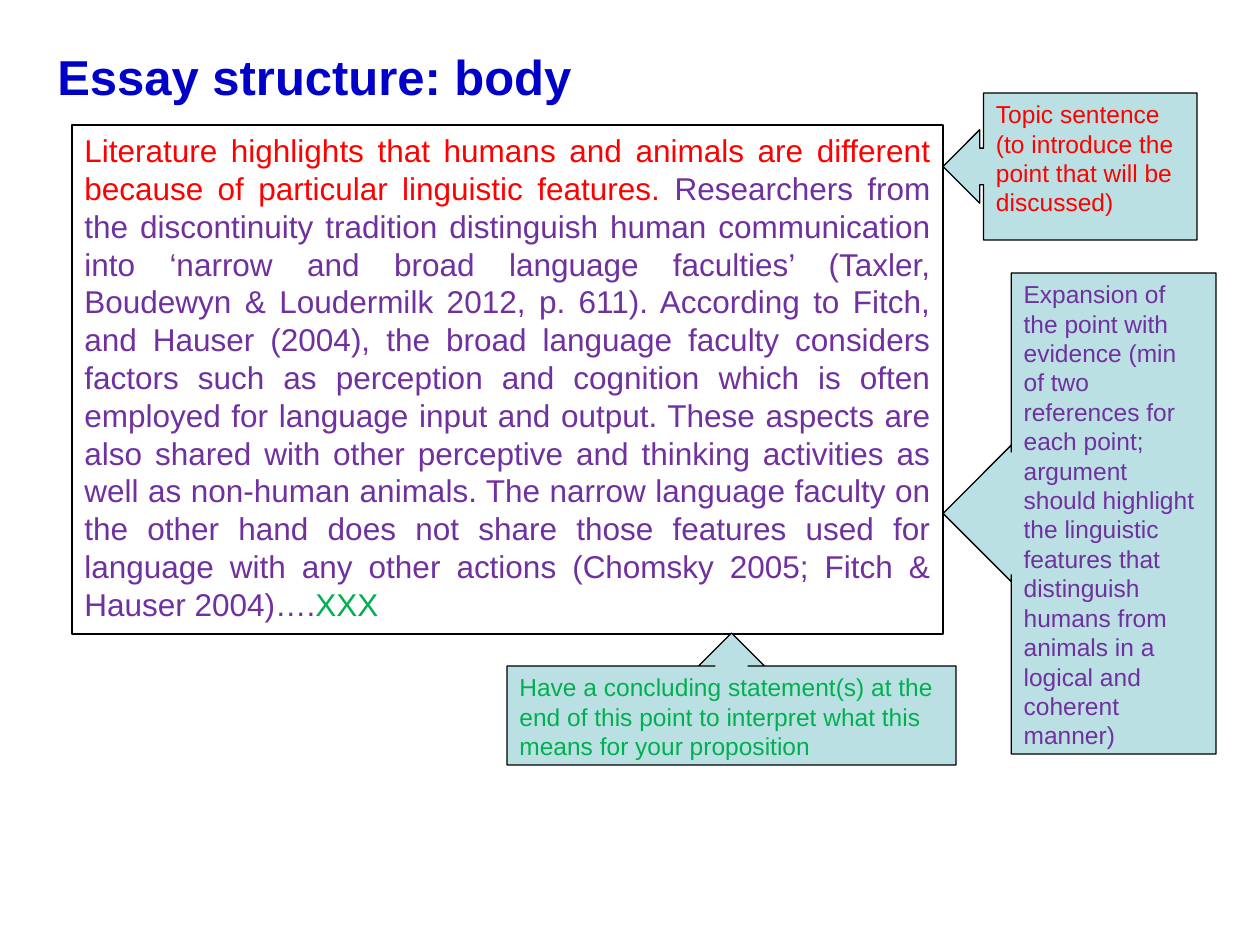
from pptx import Presentation
from pptx.dml.color import RGBColor
from pptx.enum.shapes import MSO_SHAPE
from pptx.enum.text import MSO_ANCHOR, PP_ALIGN
from pptx.util import Emu, Pt

PX_PER_INCH = 126
FONT = "Arial"
BLUE = RGBColor(0x00, 0x00, 0xC8)
RED = RGBColor(0xFF, 0x00, 0x00)
PURPLE = RGBColor(0x70, 0x30, 0xA0)
GREEN = RGBColor(0x00, 0xB0, 0x50)
PALE_TEAL = RGBColor(0xBB, 0xE0, 0xE3)
BLACK = RGBColor(0x00, 0x00, 0x00)

TITLE = "Essay structure: body"
ESSAY = [
    ("Literature highlights that humans and animals are different because of "
     "particular linguistic features. ", RED),
    ("Researchers from the discontinuity tradition distinguish human communication "
     "into ‘narrow and broad language faculties’ (Taxler, Boudewyn & Loudermilk 2012, "
     "p. 611). According to Fitch, and Hauser (2004), the broad language faculty "
     "considers factors such as perception and cognition which is often employed for "
     "language input and output. These aspects are also shared with other perceptive "
     "and thinking activities as well as non-human animals. The narrow language "
     "faculty on the other hand does not share those features used for language with "
     "any other actions (Chomsky 2005; Fitch & Hauser 2004)….", PURPLE),
    ("XXX", GREEN),
]
CALLOUTS = [
    (MSO_SHAPE.LEFT_ARROW_CALLOUT, (943, 93, 254, 147), (0.25, 0.25, 0.25, 0.84), RED,
     "Topic sentence (to introduce the point that will be discussed)"),
    (MSO_SHAPE.LEFT_ARROW_CALLOUT, (943, 273, 273, 481), (0.45, 0.25, 0.25, 0.75), PURPLE,
     "Expansion of the point with evidence (min of two references for each point; "
     "argument should highlight the linguistic features that distinguish humans from "
     "animals in a logical and coherent manner)"),
    (MSO_SHAPE.UP_ARROW_CALLOUT, (507, 633, 449, 132), (0.25, 0.25, 0.25, 0.75), GREEN,
     "Have a concluding statement(s) at the end of this point to interpret what this "
     "means for your proposition"),
]


def px(length):
    return Emu(round(length * 914400 / PX_PER_INCH))


def write(box, spans, size, align=PP_ALIGN.LEFT, bold=False):
    frame = box.text_frame
    frame.word_wrap = True
    frame.vertical_anchor = MSO_ANCHOR.TOP
    para = frame.paragraphs[0]
    para.alignment = align
    para.font.name = FONT
    para.font.size = Pt(size)
    para.font.bold = bold
    for text, color in spans:
        span = para.add_run()
        span.text = text
        span.font.color.rgb = color


def add_title(slide, bounds):
    box = slide.shapes.add_textbox(*map(px, bounds))
    write(box, [(TITLE, BLUE)], 28, bold=True)


def add_outlined(slide, kind, bounds, line_width, fill=None):
    shape = slide.shapes.add_shape(kind, *map(px, bounds))
    shape.shadow.inherit = False
    if fill is None:
        shape.fill.background()
    else:
        shape.fill.solid()
        shape.fill.fore_color.rgb = fill
    shape.line.color.rgb = BLACK
    shape.line.width = Pt(line_width)
    return shape


def add_callout(slide, kind, bounds, proportions, color, text):
    callout = add_outlined(slide, kind, bounds, 0.75, PALE_TEAL)
    for index, proportion in enumerate(proportions):
        callout.adjustments[index] = proportion
    write(callout, [(text, color)], 14)


def main():
    deck = Presentation()
    deck.slide_width = px(1260)
    deck.slide_height = px(945)
    slide = deck.slides.add_slide(deck.slide_layouts[6])
    add_title(slide, (45, 40, 1148, 92))
    essay = add_outlined(slide, MSO_SHAPE.RECTANGLE, (72, 125, 871, 509), 1.5)
    write(essay, ESSAY, 18, PP_ALIGN.JUSTIFY)
    for callout in CALLOUTS:
        add_callout(slide, *callout)
    deck.save("out.pptx")


if __name__ == "__main__":
    main()
